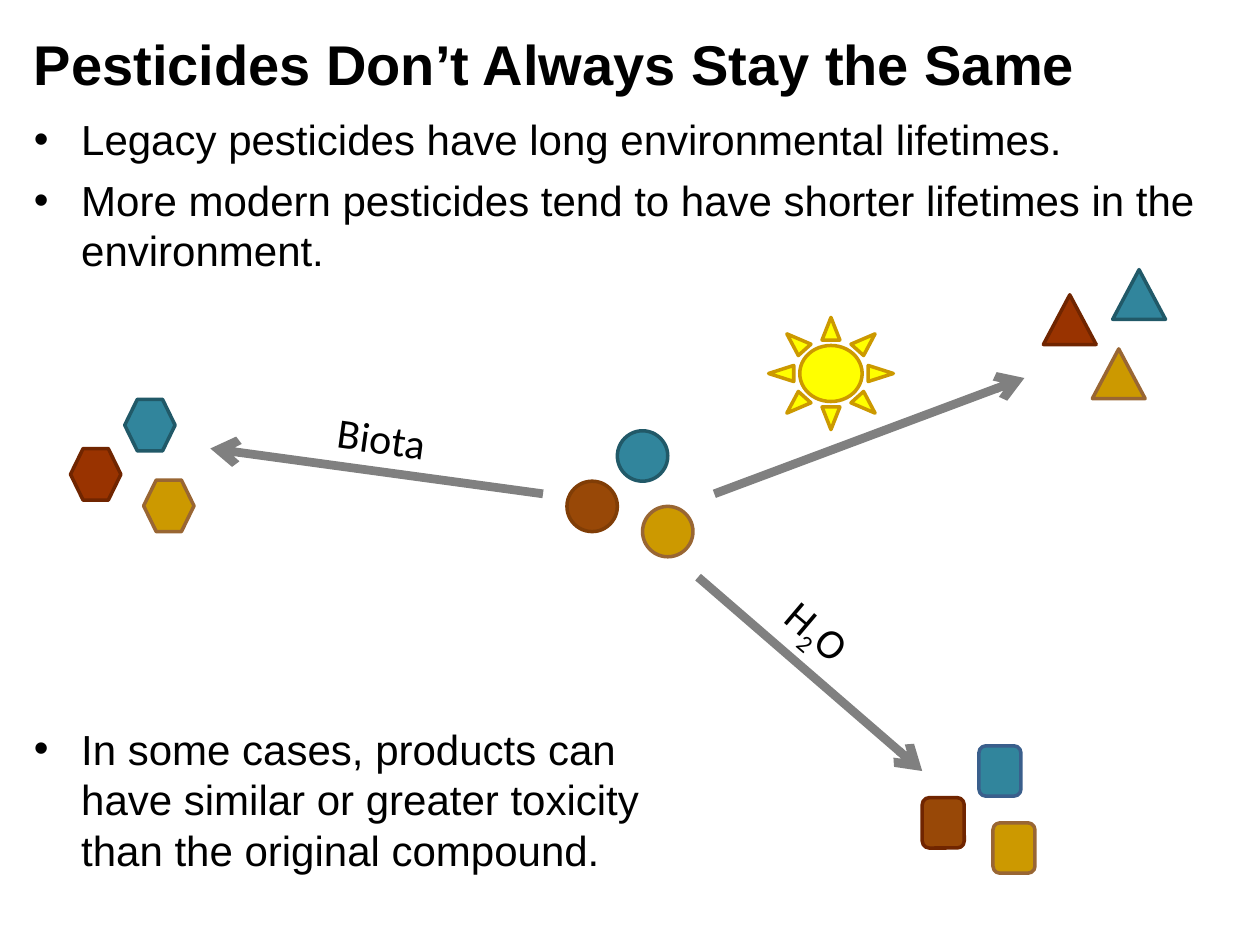
from lxml.etree import SubElement
from pptx import Presentation
from pptx.dml.color import RGBColor
from pptx.enum.shapes import MSO_CONNECTOR, MSO_SHAPE
from pptx.enum.text import MSO_ANCHOR, MSO_AUTO_SIZE, PP_ALIGN
from pptx.oxml.ns import qn
from pptx.util import Pt

BLACK, GREY = "000000", "808080"
TEAL, TEAL_EDGE = "31859C", "215968"
BROWN, RUST, RUST_EDGE = "984807", "993300", "702500"
GOLD, GOLD_EDGE = "CC9900", "996633"

TITLE = ("Pesticides Don’t Always Stay the Same", (12.2, 13, 614.2, 46))
BULLETS = [
    (["Legacy pesticides have long environmental lifetimes.",
      "More modern pesticides tend to have shorter lifetimes in the environment."],
     (12.2, 61.2, 707.8, 100.8)),
    (["In some cases, products can have similar or greater toxicity than the original compound."],
     (12.2, 409.7, 396, 94.3)),
]
# Each cluster: shape, (width, height), then left, top, fill, line of its members
CLUSTERS = [
    (MSO_SHAPE.OVAL, (28.8, 28.8), [
        (324, 275, BROWN, "803D06"),
        (352.8, 246.2, TEAL, TEAL_EDGE),
        (367.2, 289.4, GOLD, GOLD_EDGE)]),
    (MSO_SHAPE.ROUNDED_RECTANGLE, (24, 28.8), [
        (559.4, 426.2, TEAL, "3A5F8C"),
        (527, 455.8, BROWN, RUST_EDGE),
        (567.4, 470.2, GOLD, GOLD_EDGE)]),
    (MSO_SHAPE.HEXAGON, (28.8, 29.5), [
        (40.3, 256.3, RUST, RUST_EDGE),
        (82.1, 274.3, GOLD, GOLD_EDGE),
        (71.3, 228.2, TEAL, TEAL_EDGE)]),
    (MSO_SHAPE.ISOSCELES_TRIANGLE, (30.2, 28.4), [
        (596.2, 168.5, RUST, RUST_EDGE),
        (635.8, 154.1, TEAL, TEAL_EDGE),
        (624.2, 199.4, GOLD, GOLD_EDGE)]),
]
SUN = (439.2, 181.4, 71.3, 64.1)
ARROWS = [
    (408.2, 282.2, 585.4, 216),
    (398.9, 329.8, 527, 440.6),
    (310.3, 282.2, 120.2, 256.3),
]
# Runs are (text, baseline shift in thousandths of a percent)
LABELS = [
    ([("H", 0), ("2", -25000), ("O", 0)], (440.6, 344.2, 58.3, 36), 40.3),
    ([("Biota", 0)], (185.8, 232.6, 72.7, 36), 8),
]


def rgb(color):
    return RGBColor.from_string(color)


def points(values):
    return [Pt(v) for v in values]


def place(sp, box):
    sp.left, sp.top, sp.width, sp.height = points(box)


def add_run(p, text, size, font, bold=False):
    r = p.add_run()
    r.text = text
    r.font.size, r.font.name, r.font.bold = Pt(size), font, bold
    r.font.color.rgb = rgb(BLACK)
    return r


def fill_title(sp):
    text, box = TITLE
    place(sp, box)
    tf = sp.text_frame
    tf.auto_size, tf.word_wrap = MSO_AUTO_SIZE.NONE, False
    tf.vertical_anchor = MSO_ANCHOR.MIDDLE
    p = tf.paragraphs[0]
    p.alignment = PP_ALIGN.LEFT
    add_run(p, text, 32, "Arial", True)


def fill_bullets(sp, items, box):
    place(sp, box)
    tf = sp.text_frame
    tf.auto_size, tf.word_wrap = MSO_AUTO_SIZE.NONE, True
    for i, text in enumerate(items):
        p = tf.add_paragraph() if i else tf.paragraphs[0]
        p.space_before, p.space_after = Pt(0), Pt(6)
        pPr = p._p.get_or_add_pPr()
        pPr.set("marL", str(Pt(27)))
        pPr.set("indent", str(-Pt(27)))
        SubElement(pPr, qn("a:buFont")).set("typeface", "Arial")
        SubElement(pPr, qn("a:buChar")).set("char", "•")
        add_run(p, text, 24, "Arial")


def add_figure(shapes, kind, box, fill, line):
    sp = shapes.add_shape(kind, *points(box))
    sp.shadow.inherit = False
    sp.fill.solid()
    sp.fill.fore_color.rgb = rgb(fill)
    sp.line.color.rgb = rgb(line)
    sp.line.width = Pt(2)


def add_arrow(shapes, ends):
    line = shapes.add_connector(MSO_CONNECTOR.STRAIGHT, *points(ends))
    line.line.color.rgb = rgb(GREY)
    line.line.width = Pt(5)
    SubElement(line.line._get_or_add_ln(), qn("a:tailEnd")).set("type", "arrow")
    SubElement(line._element.spPr, qn("a:effectLst"))


def add_label(shapes, runs, box, angle):
    sp = shapes.add_textbox(*points(box))
    sp.rotation = angle
    tf = sp.text_frame
    tf.word_wrap = True
    for text, shift in runs:
        r = add_run(tf.paragraphs[0], text, 24, "Calibri")
        if shift:
            r.font._element.set("baseline", str(shift))


def main():
    prs = Presentation()
    prs.slide_width, prs.slide_height = Pt(720), Pt(540)
    s = prs.slides.add_slide(prs.slide_layouts.get_by_name("Two Content"))
    title, *bodies = s.placeholders
    fill_title(title)
    for sp, (items, box) in zip(bodies, BULLETS):
        fill_bullets(sp, items, box)
    for kind, size, members in CLUSTERS:
        group = s.shapes.add_group_shape()
        for left, top, fill, line in members:
            add_figure(group.shapes, kind, (left, top, *size), fill, line)
    add_figure(s.shapes, MSO_SHAPE.SUN, SUN, "FFFF00", GOLD)
    for ends in ARROWS:
        add_arrow(s.shapes, ends)
    for label in LABELS:
        add_label(s.shapes, *label)
    prs.save("out.pptx")


if __name__ == "__main__":
    main()
